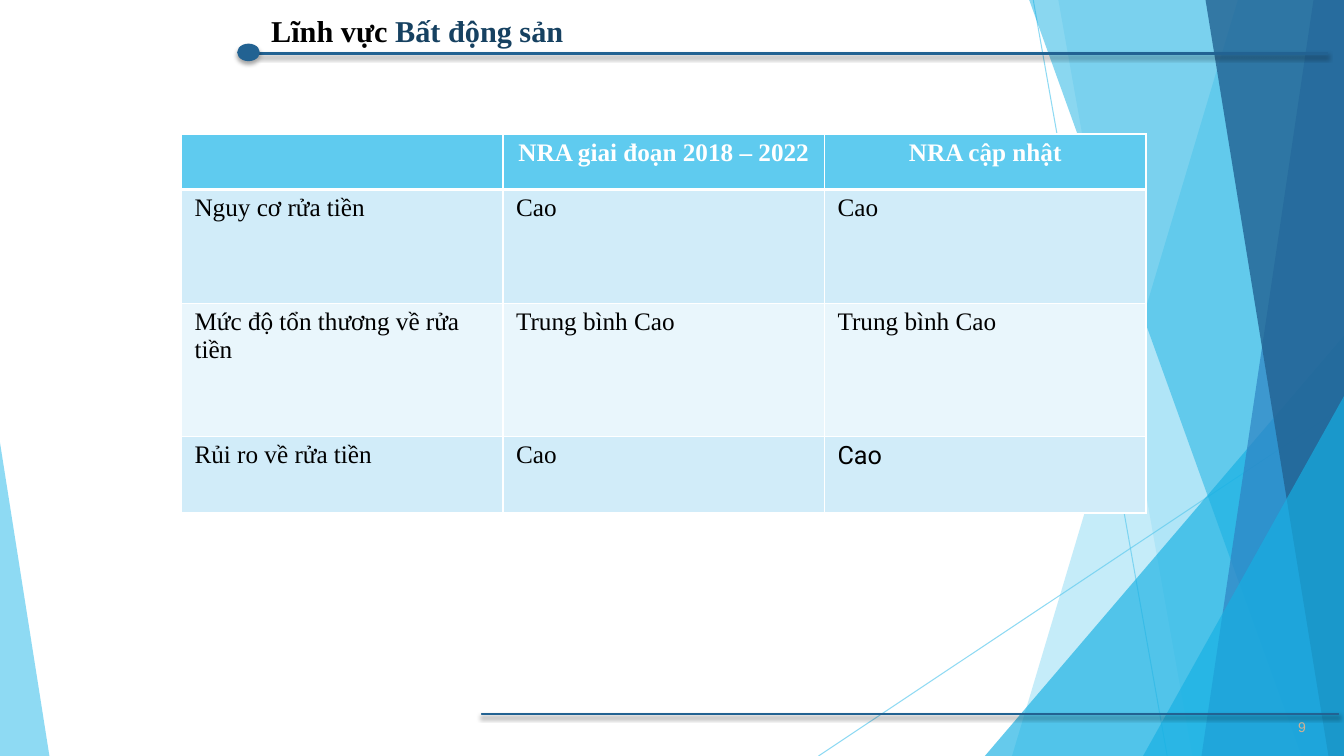
import pptx
import pptx.util
import pptx.oxml
import pptx.oxml.ns
import pptx.dml.color
import pptx.enum.shapes
import pptx.enum.text
from lxml import etree

RGB = pptx.dml.color.RGBColor
SHAPE = pptx.enum.shapes.MSO_SHAPE
ALIGN = pptx.enum.text.PP_ALIGN
ANCHOR = pptx.enum.text.MSO_ANCHOR
Pt = pptx.util.Pt
qn = pptx.oxml.ns.qn

WIDTH, HEIGHT = pptx.util.Inches(13.333), pptx.util.Inches(7.5)
SERIF = "Times New Roman"
SKY = RGB(0x5F, 0xCB, 0xEF)
CYAN = RGB(0x16, 0xB0, 0xE3)
BLUE = RGB(0x2E, 0x83, 0xC3)
NAVY = RGB(0x22, 0x62, 0x92)
INK = RGB(0x16, 0x41, 0x61)
SAND = RGB(0xD2, 0xB1, 0x91)
BAND = RGB(0xD1, 0xEC, 0xF9)
PALE = RGB(0xE9, 0xF6, 0xFC)
WHITE = RGB(0xFF, 0xFF, 0xFF)
BLACK = RGB(0, 0, 0)

ROWS = [
    ["", "NRA giai đoạn 2018 – 2022", "NRA cập nhật"],
    ["Nguy cơ rửa tiền", "Cao", "Cao"],
    ["Mức độ tổn thương về rửa tiền", "Trung bình Cao", "Trung bình Cao"],
    ["Rủi ro về rửa tiền", "Cao", "Cao"],
]
ROW_SHARES = [0.55, 1.13, 1.32, 0.76]
ROW_FILLS = [SKY, BAND, PALE, BAND]


def area(x, y, w, h):
    """Turn percentages of the slide into a box in EMU."""
    return (round(WIDTH * x / 100), round(HEIGHT * y / 100),
            round(WIDTH * w / 100), round(HEIGHT * h / 100))


def inside(box, x, y):
    """Return the point at the given percentages of a box."""
    left, top, width, height = box
    return left + round(width * x / 100), top + round(height * y / 100)


def add_text(p, text, size=18, font=SERIF, color=BLACK, bold=False, align=ALIGN.LEFT):
    """Add a formatted run to a paragraph."""
    p.alignment = align
    r = p.add_run()
    r.text = text
    r.font.size, r.font.name, r.font.bold = Pt(size), font, bold
    r.font.color.rgb = color


def set_alpha(fill_parent, percent):
    """Make the first solid colour under an element translucent."""
    color = fill_parent.find(".//" + qn("a:srgbClr"))
    etree.SubElement(color, qn("a:alpha")).set("val", str(percent * 1000))


def paint(sp, color, alpha):
    """Give a shape a translucent fill and no outline or shadow."""
    sp.shadow.inherit = False
    sp.fill.solid()
    sp.fill.fore_color.rgb = color
    sp.line.fill.background()
    set_alpha(sp.element.spPr, alpha)


def add_ray(s, box, start, end):
    """Draw a thin translucent line across a box."""
    line = s.shapes.add_connector(pptx.enum.shapes.MSO_CONNECTOR.STRAIGHT,
                                  *inside(box, *start), *inside(box, *end))
    line.line.color.rgb = SKY
    line.line.width = Pt(0.75)
    set_alpha(line.element.spPr, 70)
    etree.SubElement(line.element.spPr, qn("a:effectLst"))


def add_facet(s, box, top_x, bottom_x, color, alpha):
    """Draw a full-height facet that reaches the right edge of a box."""
    builder = s.shapes.build_freeform(*inside(box, top_x, 0))
    corners = [(100, 0), (100, 100), (bottom_x, 100)]
    builder.add_line_segments([inside(box, *c) for c in corners], close=True)
    paint(builder.convert_to_shape(), color, alpha)


def add_wedge(s, box, left, right, top, apex, color, alpha):
    """Draw a right-angled triangle standing on the bottom of a box."""
    x, y = inside(box, left, top)
    x2, y2 = inside(box, right, 100)
    sp = s.shapes.add_shape(SHAPE.ISOSCELES_TRIANGLE, x, y, x2 - x, y2 - y)
    sp.adjustments[0] = apex
    paint(sp, color, alpha)


def add_backdrop(s, box):
    """Place the rays, facets and wedges of the backdrop."""
    add_ray(s, box, (76.88, 0), (86.85, 100))
    add_ray(s, box, (100, 53.73), (60.9, 100))
    add_facet(s, box, 92.1, 75.3, SKY, 36)
    add_facet(s, box, 78.75, 88.73, SKY, 20)
    add_wedge(s, box, 73.28, 100, 44.4, 1, CYAN, 66)
    add_facet(s, box, 76.58, 96.83, CYAN, 50)
    add_facet(s, box, 97.73, 89.4, BLUE, 70)
    add_facet(s, box, 89.7, 98.85, NAVY, 80)
    add_wedge(s, box, 85.05, 100, 52.4, 1, CYAN, 66)
    add_wedge(s, box, 0, 3.68, 58.53, 0, SKY, 70)


def add_rule(s, kind, box):
    """Draw a navy rule or dot with a soft shadow below it."""
    sp = s.shapes.add_shape(kind, *box)
    sp.fill.solid()
    sp.fill.fore_color.rgb = NAVY
    sp.line.color.rgb = NAVY
    sp.line.width = Pt(1)
    sp.shadow.inherit = False
    effects = sp.element.spPr.find(qn("a:effectLst"))
    shadow = etree.SubElement(effects, qn("a:outerShdw"), blurRad=str(Pt(3)),
                              dist=str(Pt(2)), dir="5400000", rotWithShape="0")
    etree.SubElement(shadow, qn("a:srgbClr"), val="000000")
    set_alpha(effects, 35)


def add_page_number(s, box):
    """Place the page number."""
    tf = s.shapes.add_textbox(*box).text_frame
    tf.word_wrap = True
    add_text(tf.paragraphs[0], "9", size=10, font="Arial", color=SAND)


def add_title(s, box):
    """Fill the title placeholder and bring it above the backdrop."""
    title = s.shapes.title
    title.left, title.top, title.width, title.height = box
    tf = title.text_frame
    tf.word_wrap = True
    tf.auto_size = pptx.enum.text.MSO_AUTO_SIZE.NONE
    tf.vertical_anchor = ANCHOR.MIDDLE
    p = tf.paragraphs[0]
    add_text(p, "Lĩnh vực ", size=21.6, bold=True)
    add_text(p, "Bất động sản", size=21.6, color=INK, bold=True)
    title.element.getparent().append(title.element)


def set_borders(cell, widths):
    """Draw white borders of the given widths in points on a cell."""
    tc_pr = cell._tc.get_or_add_tcPr()
    for side, width in widths.items():
        ln = etree.SubElement(tc_pr, qn("a:ln" + side), w=str(Pt(width)))
        fill = etree.SubElement(ln, qn("a:solidFill"))
        etree.SubElement(fill, qn("a:srgbClr"), val=str(WHITE))


def add_risk_table(s, box):
    """Place the table that compares the two risk assessments."""
    left, top, width, height = box
    table = s.shapes.add_table(len(ROWS), len(ROWS[0]), *box).table
    for column in table.columns:
        column.width = width // len(ROWS[0])
    for i, texts in enumerate(ROWS):
        table.rows[i].height = round(height * ROW_SHARES[i] / sum(ROW_SHARES))
        header = i == 0
        for j, text in enumerate(texts):
            cell = table.cell(i, j)
            set_borders(cell, {"L": 1, "R": 1, "T": 3 if i == 1 else 1, "B": 3 if header else 1})
            cell.fill.solid()
            cell.fill.fore_color.rgb = ROW_FILLS[i]
            cell.margin_left = cell.margin_right = pptx.util.Inches(0.13)
            if text:
                last = (i, j) == (len(ROWS) - 1, len(texts) - 1)
                add_text(cell.text_frame.paragraphs[0], text, bold=header,
                         font="Roboto" if last else SERIF,
                         color=WHITE if header else BLACK,
                         align=ALIGN.CENTER if header else ALIGN.LEFT)


def main():
    """Build the slide and save it."""
    prs = pptx.Presentation()
    prs.slide_width, prs.slide_height = WIDTH, HEIGHT
    s = prs.slides.add_slide(prs.slide_layouts[5])
    add_backdrop(s, area(0, 0, 100, 100))
    add_rule(s, SHAPE.RECTANGLE, area(35.85, 94.4, 63.75, 0.13))
    add_rule(s, SHAPE.RECTANGLE, area(19.28, 6.93, 79.5, 0.27))
    add_rule(s, SHAPE.OVAL, area(17.7, 5.87, 1.58, 2.13))
    add_page_number(s, area(95.85, 94.4, 4.2, 3.6))
    add_title(s, area(19.43, 0.8, 86.25, 6.53))
    add_risk_table(s, area(13.5, 17.73, 71.78, 50.13))
    prs.save("out.pptx")


if __name__ == "__main__":
    main()
